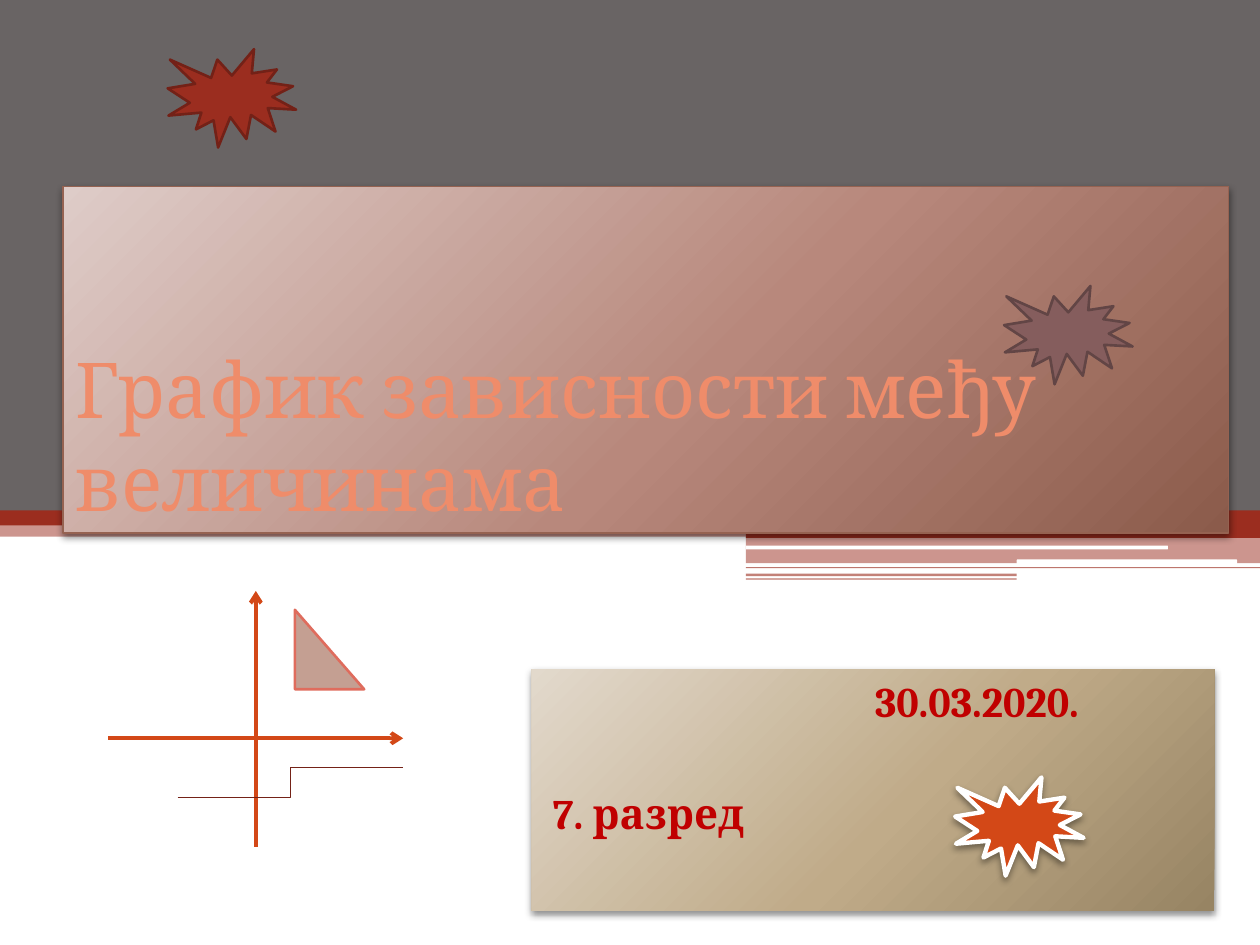
import pptx
import pptx.util
import pptx.dml.color
import pptx.enum.shapes
import pptx.enum.text
import pptx.oxml
import pptx.oxml.ns

Pt = pptx.util.Pt
RGB = pptx.dml.color.RGBColor.from_string
MSO = pptx.enum.shapes.MSO_SHAPE
LINK = pptx.enum.shapes.MSO_CONNECTOR
ANCHOR = pptx.enum.text.MSO_ANCHOR
LEFT = pptx.enum.text.PP_ALIGN.LEFT
NS = pptx.oxml.ns.nsdecls("a")


class Theme:
    font = "Cambria"
    title_size, body_size = 44, 24
    red, orange, grey, white = "9B2D1F", "D34817", "696464", "FFFFFF"
    title_text, body_text = "EF8C6A", "C00000"
    title_stops = ((0, "DECCC8"), (55, "B8887C"), (100, "8B5B4B"))
    body_stops = ((0, "E2D9CC"), (55, "C0AB89"), (100, "978463"))
    title_line = "956251"
    mauve, mauve_line, red_line = "855D5D", "624545", "732117"
    triangle, triangle_line, step_line = "C49F92", "DF6C5D", "742217"


class Builder:
    def __init__(self, slide, theme):
        self.slide, self.theme = slide, theme

    def line(self, line, color, width):
        line.color.rgb = RGB(color)
        line.width = Pt(width)

    def shape(self, kind, box, fill, alpha=100, line=None, shadow=None):
        sp = self.slide.shapes.add_shape(kind, *map(Pt, box))
        sp.shadow.inherit = False
        sp.fill.solid()
        sp.fill.fore_color.rgb = RGB(fill)
        if alpha < 100:
            clr = sp._element.spPr.find(".//" + pptx.oxml.ns.qn("a:srgbClr"))
            clr.append(pptx.oxml.parse_xml(f'<a:alpha {NS} val="{alpha * 1000}"/>'))
        if line:
            self.line(sp.line, *line)
        else:
            sp.line.fill.background()
        if shadow:
            self.shadow(sp, shadow)
        return sp

    def shadow(self, sp, alpha):
        """Give a shape a soft shadow that falls straight down."""
        sp.shadow.inherit = False
        sp._element.spPr.effectLst.append(self.outer_shadow(alpha))

    def outer_shadow(self, alpha):
        return pptx.oxml.parse_xml(
            f'<a:outerShdw {NS} blurRad="{Pt(4)}" dist="{Pt(2)}" dir="5400000" algn="t" '
            f'rotWithShape="0"><a:srgbClr val="000000"><a:alpha val="{alpha * 1000}"/>'
            '</a:srgbClr></a:outerShdw>')

    def connector(self, kind, start, end, color, width, arrow=False):
        cn = self.slide.shapes.add_connector(kind, *map(Pt, start + end))
        self.line(cn.line, color, width)
        if arrow:
            cn.line._get_or_add_ln().append(
                pptx.oxml.parse_xml(f'<a:tailEnd {NS} type="arrow"/>'))
        cn._element.spPr.append(pptx.oxml.parse_xml(f"<a:effectLst {NS}/>"))
        return cn

    def panel(self, sp, box, stops, anchor):
        """Place a placeholder in front, with a radial gradient and a shadow."""
        self.slide.shapes._spTree.append(sp._element)
        for name, value in zip(("left", "top", "width", "height"), box):
            setattr(sp, name, Pt(value))
        gs = "".join(f'<a:gs pos="{pos * 1000}"><a:srgbClr val="{color}"/></a:gs>'
                     for pos, color in stops)
        sp._element.spPr.append(pptx.oxml.parse_xml(
            f'<a:gradFill {NS}><a:gsLst>{gs}</a:gsLst><a:path path="circle">'
            '<a:fillToRect l="-40000" t="-90000" r="140000" b="190000"/>'
            '</a:path></a:gradFill>'))
        self.shadow(sp, 45)
        tf = sp.text_frame
        tf.word_wrap = True
        tf.auto_size = pptx.enum.text.MSO_AUTO_SIZE.NONE
        tf.vertical_anchor = anchor
        return tf

    def text(self, p, text, color, **fmt):
        p.alignment = LEFT
        r = p.add_run()
        r.text = text
        for name, value in {"name": self.theme.font, **fmt}.items():
            setattr(r.font, name, value)
        r.font.color.rgb = RGB(color)
        return r

    def title(self, box, text):
        t, sp = self.theme, self.slide.shapes.title
        tf = self.panel(sp, box, t.title_stops, ANCHOR.BOTTOM)
        self.line(sp.line, t.title_line, 0.75)
        r = self.text(tf.paragraphs[0], text, t.title_text, size=Pt(t.title_size))
        rpr = r.font._element
        rpr.insert(0, pptx.oxml.parse_xml(
            f'<a:ln {NS} w="{Pt(0.8)}"><a:solidFill><a:srgbClr val="{t.orange}"/>'
            '</a:solidFill></a:ln>'))
        effects = pptx.oxml.parse_xml(f"<a:effectLst {NS}/>")
        effects.append(self.outer_shadow(45))
        rpr.find(pptx.oxml.ns.qn("a:latin")).addprevious(effects)

    def body(self, box, items):
        """Fill the subtitle with (text, left indent, space before) lines."""
        t = self.theme
        tf = self.panel(self.slide.placeholders[1], box, t.body_stops, ANCHOR.TOP)
        for i, (text, indent, before) in enumerate(items):
            p = tf.add_paragraph() if i else tf.paragraphs[0]
            p.space_before = Pt(before)
            ppr = p._p.get_or_add_pPr()
            for name, value in {"marL": Pt(indent), "indent": 0}.items():
                ppr.set(name, str(value))
            self.text(p, text, t.body_text, size=Pt(t.body_size), bold=True)


def main():
    prs = pptx.Presentation()
    prs.slide_width, prs.slide_height = Pt(720), Pt(540)
    t = Theme()
    b = Builder(prs.slides.add_slide(prs.slide_layouts[0]), t)

    right = 426.2
    bands = (
        (MSO.RECTANGLE, (right, 300.2, 293.8, 7.2), t.red, 100),
        (MSO.RECTANGLE, (right, 306.7, 293.8, 15.1), t.red, 50),
        (MSO.RECTANGLE, (right, 324, 293.8, 0.7), t.red, 65),
        (MSO.RECTANGLE, (right, 327.8, 154.8, 1.4), t.red, 60),
        (MSO.RECTANGLE, (right, 330.5, 154.8, 0.7), t.red, 65),
        (MSO.ROUNDED_RECTANGLE, (right, 311.8, 241.2, 2.2), t.white, 100),
        (MSO.ROUNDED_RECTANGLE, (581, 319.7, 126, 2.9), t.white, 100),
        (MSO.RECTANGLE, (0, 287.3, 720, 19.4), t.red, 50),
        (MSO.RECTANGLE, (0, 289.4, 720, 10.8), t.red, 100),
        (MSO.RECTANGLE, (504.7, 286.6, 215.3, 20), t.red, 100),
        (MSO.RECTANGLE, (0, 0, 720, 291.6), t.grey, 100),
    )
    for band in bands:
        b.shape(*band)

    b.title((36, 106.6, 666, 198), "График зависности међу величинама")
    b.body((303.8, 382.3, 390.2, 138.2),
           (("30.03.2020.", 189, 3), ("7. разред", 5, 35)))

    for start, end in (((61.9, 421.9), (230.4, 421.9)), ((146.2, 483.8), (146.2, 337.7))):
        b.connector(LINK.STRAIGHT, start, end, t.orange, 2.25, arrow=True)
    b.shape(MSO.RIGHT_TRIANGLE, (168.5, 348.5, 39.6, 45.4), t.triangle,
            line=(t.triangle_line, 1.5))
    b.connector(LINK.ELBOW, (101.5, 455.8), (230.4, 438.5), t.step_line, 0.75)

    bursts = (
        (573.8, 163.4, t.mauve, (t.mauve_line, 1.5), None),
        (95.8, 28.1, t.red, (t.red_line, 1.5), None),
        (545.8, 444.2, t.orange, (t.white, 2.5), 40),
    )
    for x, y, fill, line, shadow in bursts:
        b.shape(MSO.EXPLOSION1, (x, y, 73.4, 56.2), fill, line=line, shadow=shadow)

    prs.save("out.pptx")


if __name__ == "__main__":
    main()
